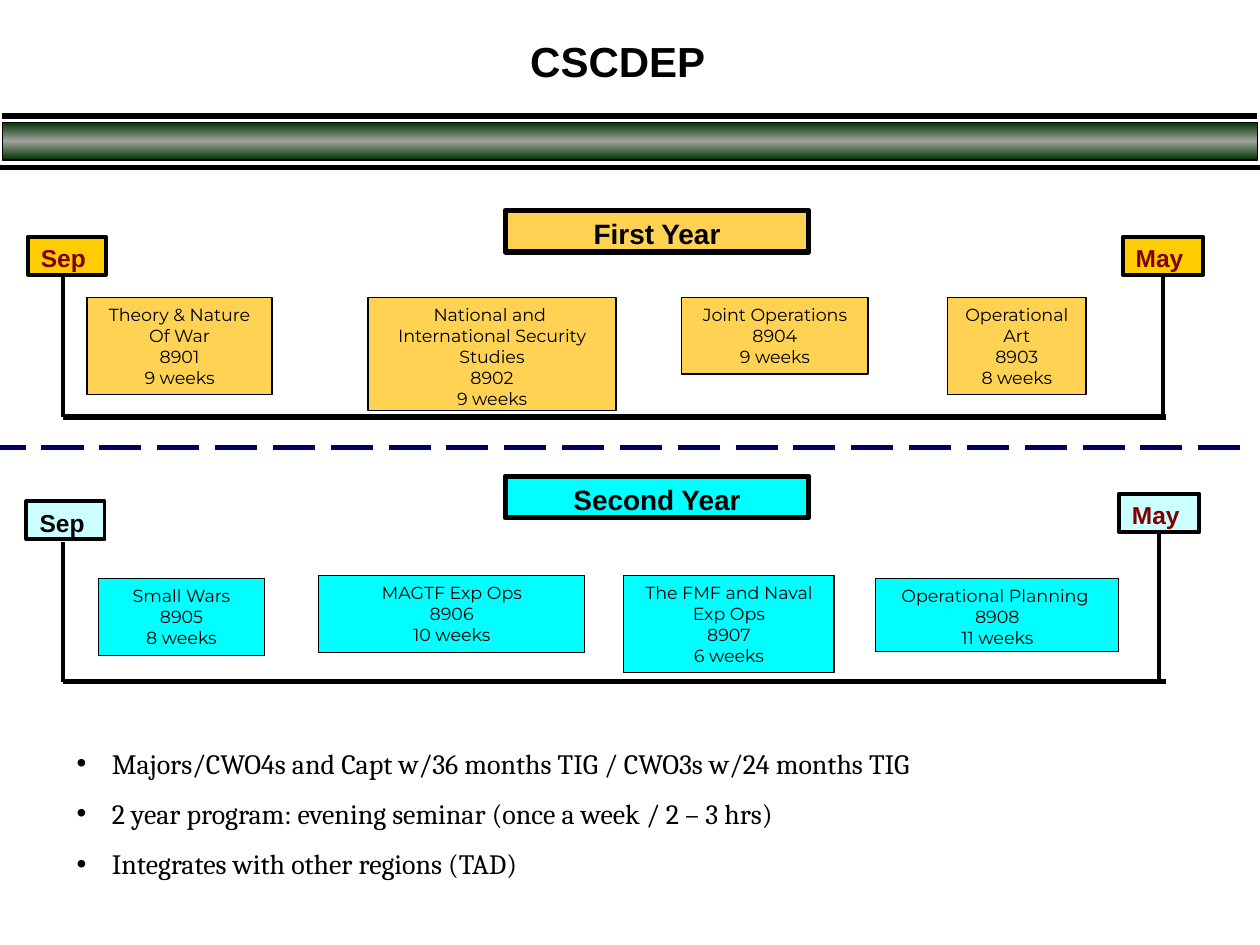
from copy import deepcopy
from pptx import Presentation
from pptx.dml.color import RGBColor
from pptx.enum.dml import MSO_LINE as Dash
from pptx.enum.shapes import MSO_CONNECTOR as Wire, MSO_SHAPE as Shape
from pptx.enum.text import MSO_ANCHOR as Anchor, MSO_AUTO_SIZE as Fit, PP_ALIGN as Align
from pptx.oxml.ns import qn
from pptx.util import Inches, Pt
from lxml.etree import SubElement

BLACK, RED, GREEN = "000000", "800000", "003300"
GOLD, AMBER, CYAN, PALE = "FFD253", "FFCC00", "00FFFF", "CCFFFF"


def paint(code):
    return RGBColor.from_string(code)


class Board:
    """Holds the fonts and the current slide, and draws each kind of element."""

    head, body, list_font = "Arial", "Montserrat", "Cambria"

    def __init__(self, slide):
        self.slide = slide

    def label(self, frame, lines, size, font, color=BLACK, bold=False, align=Align.CENTER):
        frame.text = "\n".join(lines)
        for para in frame.paragraphs:
            para.alignment = align
            for run in para.runs:
                run.font.size, run.font.name, run.font.bold = Pt(size), font, bold
                run.font.color.rgb = paint(color)

    def rect(self, at, width):
        box = self.slide.shapes.add_shape(Shape.RECTANGLE, *map(Inches, at))
        box.shadow.inherit = False
        box.line.color.rgb, box.line.width = paint(BLACK), Pt(width)
        return box

    def box(self, at, fill, lines, size=10, width=0.75, color=BLACK, wrap=False, bold=False):
        box = self.rect(at, width)
        box.fill.solid()
        box.fill.fore_color.rgb = paint(fill)
        frame = box.text_frame
        self.label(frame, lines, size, self.head if bold else self.body, color, bold)
        frame.vertical_anchor = Anchor.TOP
        frame.word_wrap, frame.auto_size = wrap, Fit.SHAPE_TO_FIT_TEXT
        return box

    def band(self, at, stops):
        box = self.rect(at, 0.75)
        fill = box.fill
        fill.gradient()
        fill.gradient_angle = 90
        first = box._element.spPr.find(".//" + qn("a:gs"))
        first.addnext(deepcopy(first))
        for stop, (place, color) in zip(fill.gradient_stops, stops):
            stop.position, stop.color.rgb = place, paint(color)

    def wire(self, start, end, width=3, color=BLACK, dash=None, joint=None):
        wire = self.slide.shapes.add_connector(Wire.STRAIGHT, *map(Inches, start + end))
        wire.line.color.rgb, wire.line.width = paint(color), Pt(width)
        if dash:
            wire.line.dash_style = dash
        if joint:
            wire.begin_connect(joint, 2)
        SubElement(wire._element.spPr, qn("a:effectLst"))

    def title(self, at, text):
        frame = self.slide.shapes.add_textbox(*map(Inches, at)).text_frame
        frame.word_wrap, frame.vertical_anchor = True, Anchor.BOTTOM
        self.label(frame, [text], 24, self.head, bold=True, align=Align.LEFT)

    def bullets(self, at, lines):
        frame = self.slide.shapes.add_textbox(*map(Inches, at)).text_frame
        frame.word_wrap, frame.auto_size = True, Fit.SHAPE_TO_FIT_TEXT
        self.label(frame, lines, 16, self.list_font, align=Align.LEFT)
        for para in frame.paragraphs:
            para.line_spacing = 1.5
            props = para._p.get_or_add_pPr()
            props.set("marL", str(Inches(0.28)))
            props.set("indent", str(-Inches(0.28)))
            SubElement(props, qn("a:buFont"), typeface="Arial")
            SubElement(props, qn("a:buChar"), char="•")

    def year(self, name, top, fill, tint, sep, may, sep_color, base, courses):
        self.wire((0.5, base), (9.25, base))
        self.box((4.01, top, 2.41, 0.33), fill, [name], 16, 3, wrap=True, bold=True)
        self.box(sep + (0.62, 0.3), tint, ["Sep "], 14, 2.25, sep_color, bold=True)
        self.wire((0.5, sep[1] + 0.32), (0.5, base), 2.25)
        end = self.box(may + (0.64, 0.3), tint, ["May "], 14, 2.25, RED, bold=True)
        mid = may[0] + 0.32
        self.wire((mid, may[1] + 0.3), (mid, base), 2.25, joint=end)
        for at, wrap, *lines in courses:
            self.box(at, fill, lines, wrap=wrap)


def main():
    deck = Presentation()
    deck.slide_width, deck.slide_height = Inches(10), Inches(7.5)
    board = Board(deck.slides.add_slide(deck.slide_layouts[6]))

    board.wire((0.02, 0.92), (9.98, 0.92))
    board.band((0.02, 0.97, 9.96, 0.3), [(0, GREEN), (0.5, "9EA29E"), (1, GREEN)])
    board.wire((0, 1.33), (10, 1.33))
    board.title((4.11, 0.11, 2.21, 0.62), "CSCDEP")

    board.wire((-0.13, 3.55), (9.87, 3.55), color="000066", dash=Dash.LONG_DASH)
    board.year("First Year", 1.67, GOLD, AMBER, (0.22, 1.88), (8.91, 1.88), RED, 3.31, [
        ((0.69, 2.36, 1.47, 0.77), False, "Theory & Nature", "Of War", "8901", "9 weeks"),
        ((2.92, 2.36, 1.97, 0.9), False, "National and ", "International Security",
         "Studies", "8902", "9 weeks"),
        ((5.41, 2.36, 1.48, 0.61), False, "Joint Operations", "8904", "9 weeks"),
        ((7.52, 2.36, 1.1, 0.77), False, "Operational", "Art", "8903", "8 weeks"),
    ])
    board.year("Second Year", 3.78, CYAN, PALE, (0.21, 3.98), (8.88, 3.92), BLACK, 5.41, [
        ((0.78, 4.59, 1.32, 0.61), True, "Small Wars", "8905", "8 weeks"),
        ((2.53, 4.57, 2.11, 0.61), True, "MAGTF Exp Ops", "8906", "10 weeks"),
        ((4.95, 4.57, 1.67, 0.77), False, "The FMF and Naval", "Exp Ops", "8907", "6 weeks"),
        ((6.95, 4.59, 1.93, 0.58), True, "Operational Planning ", "8908", "11 weeks"),
    ])
    board.bullets((0.51, 5.74, 8.37, 1.67), [
        "Majors/CWO4s and Capt w/36 months TIG / CWO3s w/24 months TIG",
        "2 year program: evening seminar (once a week / 2 – 3 hrs)",
        "Integrates with other regions (TAD)",
    ])
    deck.save("out.pptx")


if __name__ == "__main__":
    main()
